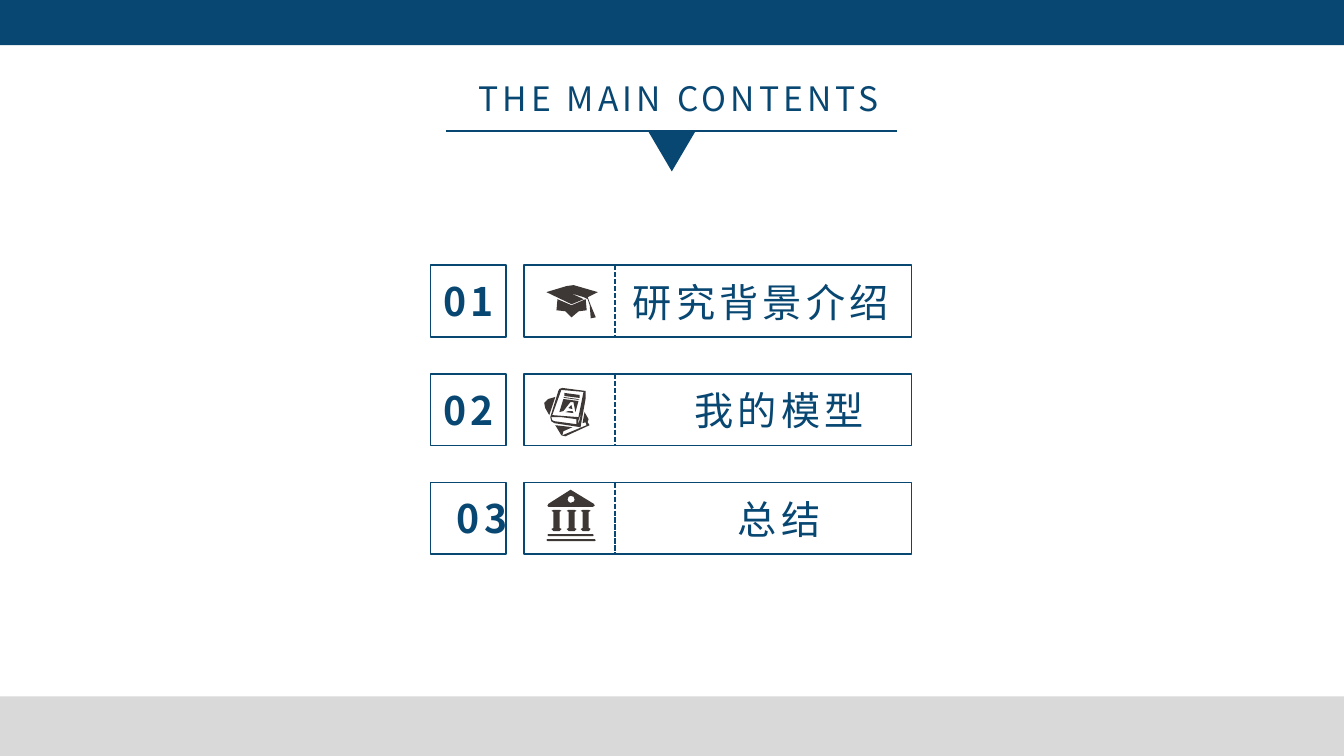
"""Build a contents slide with three numbered, icon-marked sections."""
from dataclasses import dataclass

from lxml import etree
from pptx import Presentation
from pptx.dml.color import RGBColor
from pptx.enum.dml import MSO_LINE
from pptx.enum.shapes import MSO_CONNECTOR, MSO_SHAPE
from pptx.enum.text import MSO_ANCHOR, PP_ALIGN
from pptx.oxml.ns import qn
from pptx.util import Cm, Pt

RECT = MSO_SHAPE.RECTANGLE
TRIANGLE = MSO_SHAPE.ISOSCELES_TRIANGLE
STRAIGHT = MSO_CONNECTOR.STRAIGHT
DASH = MSO_LINE.SQUARE_DOT
TOP = MSO_ANCHOR.TOP
LEFT, CENTER = PP_ALIGN.LEFT, PP_ALIGN.CENTER

WIDTH, HEIGHT = 33.87, 19.05
ROW_TOP, ROW_STEP, ROW_HIGH = 6.68, 2.74, 1.81
GRID = Cm(2.54) / 100

CAP = [
    [(20, 2), (27, 1), (51, 8), (41, 13), (44, 21), (49, 33), (44, 34),
     (43, 21), (41, 15), (37, 13), (24, 9), (37, 15), (25, 20), (0, 8)],
    [(11, 15), (10, 26), (19, 27), (25, 33), (32, 27), (40, 26), (39, 15),
     (25, 21)],
]
BOOKS = [
    [(15, 4), (16, 2), (19, 1), (42, 4), (42, 12), (37, 40), (11, 36),
     (8, 34), (7, 30)],
    [(18, 3), (9, 28), (35, 30), (40, 5)],
    [(38, 25), (35, 33), (35, 37)],
    [(8, 30), (9, 33), (11, 34), (33, 37), (33, 32), (18, 30)],
    [(21, 6), (21, 9), (36, 11), (36, 8)],
    [(20, 10), (21, 11), (36, 13), (34, 12)],
    [(1, 16), (2, 21), (6, 28), (12, 10), (5, 12)],
    [(16, 25), (20, 24), (27, 15), (30, 15), (32, 25), (35, 14), (20, 12)],
    [(28, 18), (25, 21), (29, 22)],
    [(22, 25), (30, 26), (29, 24), (25, 24)],
    [(41, 25), (39, 36), (42, 35), (43, 38), (19, 48), (20, 44), (29, 40),
     (12, 38), (18, 48), (22, 49), (46, 38), (44, 35), (45, 32)],
]
COLUMN = [(2, 20), (8, 20), (10, 21), (8, 22), (8, 38), (10, 39), (8, 41),
          (2, 41), (0, 39), (2, 38), (2, 22), (0, 21)]
BANK = [
    [(0, 50), (1, 49), (48, 49), (49, 50), (48, 51), (1, 51)],
    [(1, 45), (2, 44), (46, 44), (47, 45), (46, 46), (2, 46)],
    [(1, 16), (2, 14), (24, 0), (47, 14), (48, 16), (46, 17), (2, 17)],
    [(21, 10), (22, 7), (24, 6), (27, 7), (28, 10), (27, 12), (24, 13),
     (22, 12)],
] + [[(x + left, y) for x, y in COLUMN] for left in (5, 20, 34)]

ROWS = [
    ("01", LEFT, "研究背景介绍", LEFT, CAP, 13.77, 0.48),
    ("02", LEFT, "我的模型", CENTER, BOOKS, 13.69, 0.33),
    ("03", CENTER, "总结", CENTER, BANK, 13.77, 0.18),
]


@dataclass(frozen=True)
class Theme:
    """Colours, font and sizes."""
    navy: RGBColor = RGBColor(0x08, 0x47, 0x72)
    gray: RGBColor = RGBColor(0xD9, 0xD9, 0xD9)
    ink: RGBColor = RGBColor(0x3D, 0x38, 0x36)
    font: str = "Noto Sans CJK SC"
    head: int = 24
    item: int = 28
    rule: float = 1.5
    edge: float = 1.25
    track: int = 300


class Deck:
    """Draw styled elements on the current slide."""

    def __init__(self, theme):
        self.theme = theme
        self.prs = Presentation()
        self.prs.slide_width, self.prs.slide_height = Cm(WIDTH), Cm(HEIGHT)
        self.slide = self.prs.slides.add_slide(self.prs.slide_layouts[5])
        self.shapes = self.slide.shapes

    def text(self, shape, words, size, align=LEFT, bold=False):
        """Put one spaced run into a shape."""
        frame = shape.text_frame
        frame.word_wrap = True
        frame.vertical_anchor = TOP
        para = frame.paragraphs[0]
        para.alignment = align
        run = para.add_run()
        run.text = words
        font = run.font
        font.size, font.bold = Pt(size), bold
        font.color.rgb = self.theme.navy
        font.name = self.theme.font
        props = run._r.get_or_add_rPr()
        props.set("spc", str(self.theme.track))
        etree.SubElement(props, qn("a:ea")).set("typeface", self.theme.font)

    def title(self, words, x, y, w, h, inset):
        """Move and fill the title placeholder."""
        shape = self.shapes.title
        shape.left, shape.top = Cm(x), Cm(y)
        shape.width, shape.height = Cm(w), Cm(h)
        shape.text_frame.margin_left = Cm(inset)
        self.text(shape, words, self.theme.head)

    def label(self, words, x, y, w, h, align, bold=False):
        """Add a text box."""
        box = self.shapes.add_textbox(Cm(x), Cm(y), Cm(w), Cm(h))
        self.text(box, words, self.theme.item, align, bold)

    def block(self, x, y, w, h, fill, kind=RECT, turn=0):
        """Add a filled shape."""
        shape = self.shapes.add_shape(kind, Cm(x), Cm(y), Cm(w), Cm(h))
        shape.rotation = turn
        self.paint(shape, fill)

    def paint(self, shape, fill):
        """Give a shape a flat fill."""
        shape.shadow.inherit = False
        shape.fill.solid()
        shape.fill.fore_color.rgb = fill
        shape.line.fill.background()

    def frame(self, x, y, w, h):
        """Add an outlined box."""
        shape = self.shapes.add_shape(RECT, Cm(x), Cm(y), Cm(w), Cm(h))
        shape.shadow.inherit = False
        shape.fill.background()
        shape.line.color.rgb = self.theme.navy
        shape.line.width = Pt(self.theme.edge)

    def line(self, x1, y1, x2, y2, width, dash=None):
        """Add a straight line."""
        line = self.shapes.add_connector(STRAIGHT, Cm(x1), Cm(y1), Cm(x2), Cm(y2))
        line.line.color.rgb = self.theme.navy
        line.line.width = Pt(width)
        if dash:
            line.line.dash_style = dash
        etree.SubElement(line._element.spPr, qn("a:effectLst"))

    def icon(self, loops, x, y):
        """Add an icon from closed loops."""
        first, *rest = loops
        pen = self.shapes.build_freeform(*first[0], scale=GRID)
        pen.add_line_segments(first[1:], close=True)
        for loop in rest:
            pen.move_to(*loop[0])
            pen.add_line_segments(loop[1:], close=True)
        self.paint(pen.convert_to_shape(Cm(x), Cm(y)), self.theme.ink)


def main():
    """Draw and save the slide."""
    theme = Theme()
    deck = Deck(theme)
    deck.block(0, 0, WIDTH, 1.14, theme.navy)
    deck.title("THE MAIN CONTENTS", 11.2, 1.83, 11.48, 1.27, 0.85)
    deck.line(11.25, 3.3, 22.61, 3.3, theme.rule)
    deck.block(16.33, 3.3, 1.2, 1.02, theme.navy, TRIANGLE, 180)
    for i, (num, side, name, align, loops, x, drop) in enumerate(ROWS):
        top = ROW_TOP + i * ROW_STEP
        deck.frame(10.85, top, 1.9, ROW_HIGH)
        deck.frame(13.21, top, 9.76, ROW_HIGH)
        deck.label(num, 10.92, top + 0.18, 2.46, 1.45, side, True)
        deck.label(name, 15.7, top + 0.2, 7.87, 1.45, align)
        deck.line(15.49, top, 15.49, top + ROW_HIGH, theme.edge, DASH)
        deck.icon(loops, x, top + drop)
    deck.block(0, 17.55, WIDTH, 1.5, theme.gray)
    deck.prs.save("out.pptx")


if __name__ == "__main__":
    main()
